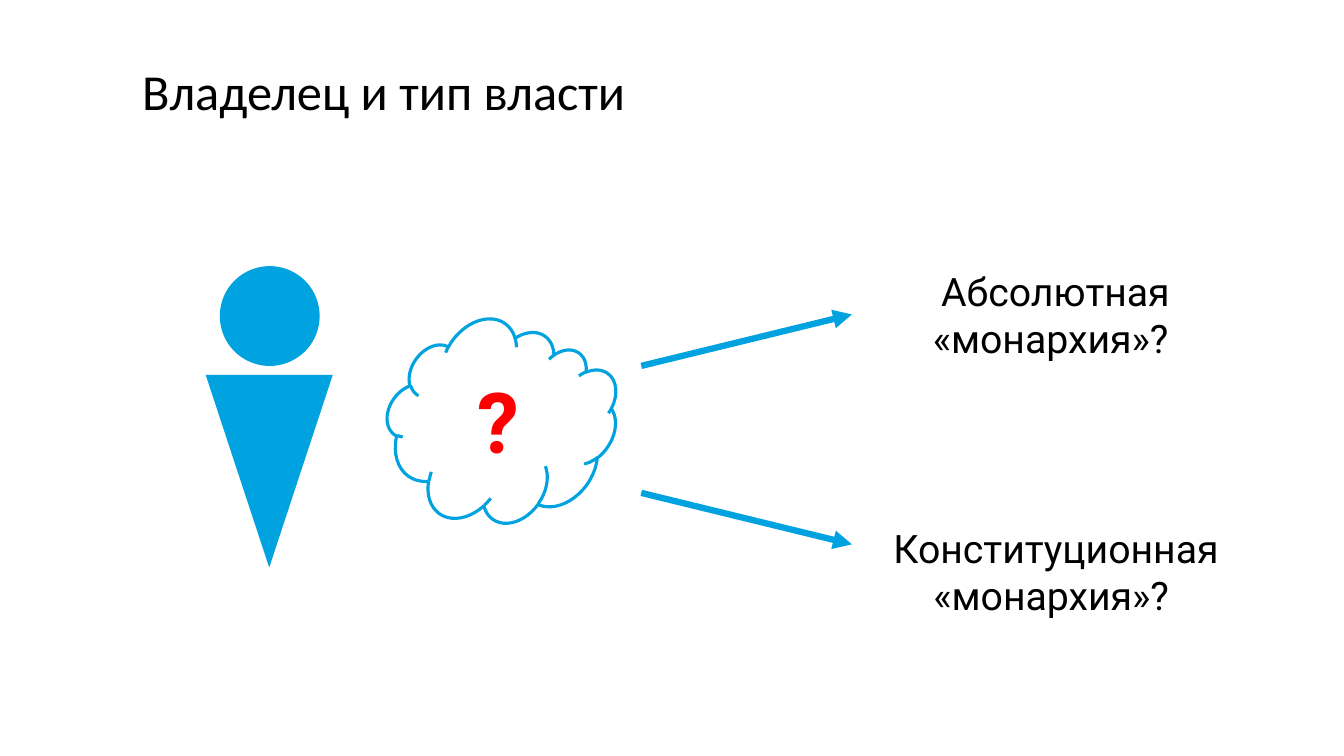
from pptx import Presentation
from pptx.dml.color import RGBColor
from pptx.enum.shapes import MSO_CONNECTOR, MSO_SHAPE
from pptx.enum.text import MSO_ANCHOR, MSO_AUTO_SIZE, PP_ALIGN
from pptx.oxml.ns import qn
from pptx.util import Inches, Pt
from lxml import etree

LEFT, CENTER = PP_ALIGN.LEFT, PP_ALIGN.CENTER
TOP = MSO_ANCHOR.TOP
NO_FIT = MSO_AUTO_SIZE.NONE
STRAIGHT = MSO_CONNECTOR.STRAIGHT
CLOUD = MSO_SHAPE.CLOUD
TRIANGLE, OVAL = MSO_SHAPE.ISOSCELES_TRIANGLE, MSO_SHAPE.OVAL
BLUE, BLACK, RED, WHITE = "00A3E0", "000000", "FF0000", "FFFFFF"


def rgb(value):
    return RGBColor.from_string(value)


def write(sp, text, size, font, color, align=CENTER, bold=False):
    tf = sp.text_frame
    tf.word_wrap = True
    tf.auto_size = NO_FIT
    tf.vertical_anchor = TOP
    p = tf.paragraphs[0]
    p.alignment = align
    r = p.add_run()
    r.text = text
    r.font.size = Pt(size)
    r.font.name = font
    r.font.bold = bold
    r.font.color.rgb = rgb(color)
    return p


prs = Presentation()
prs.slide_width, prs.slide_height = Inches(13.33), Inches(7.5)
s = prs.slides.add_slide(prs.slide_layouts[5])
s.background.fill.solid()
s.background.fill.fore_color.rgb = rgb(WHITE)

# Title
title = s.shapes.title
title.left, title.top = Inches(1.31), Inches(0.7)
title.width, title.height = Inches(10.92), Inches(0.57)
p = write(title, "Владелец и тип власти", 36, "Calibri", BLACK, LEFT)
p.line_spacing = Pt(32)

# Two types of power, each with its arrow
options = [
    (" Абсолютная «монархия»?", 8.72, 2.6, 3.4, 3.63, 3.12),
    (" Конституционная «монархия»?", 8.62, 5.15, 3.61, 4.89, 5.4),
]
for text, left, top, width, start, end in options:
    sp = s.shapes.add_textbox(Inches(left), Inches(top), Inches(width), Inches(1.04))
    write(sp, text, 28, "Roboto", BLACK)

    arrow = s.shapes.add_connector(
        STRAIGHT, Inches(6.36), Inches(start), Inches(8.45), Inches(end))
    arrow.line.color.rgb = rgb(BLUE)
    arrow.line.width = Pt(4.5)
    etree.SubElement(arrow.line._get_or_add_ln(), qn("a:tailEnd"), type="triangle")
    etree.SubElement(arrow._element.spPr, qn("a:effectLst"))

# Thought cloud with a question mark
sp = s.shapes.add_textbox(Inches(4.7), Inches(3.62), Inches(0.49), Inches(1.11))
write(sp, "?", 60, "Roboto", RED, bold=True)
sp.text_frame.word_wrap = False

cloud = s.shapes.add_shape(CLOUD, Inches(3.9), Inches(3.17), Inches(2.1), Inches(2.1))
cloud.rotation = 35.3
cloud.shadow.inherit = False
cloud.fill.background()
cloud.line.color.rgb = rgb(BLUE)
cloud.line.width = Pt(2.25)

# Owner figure: body and head
for kind, left, top, width, height, turn in [
    (TRIANGLE, 2.04, 3.72, 1.26, 1.91, 180),
    (OVAL, 2.18, 2.64, 0.99, 0.99, 0),
]:
    sp = s.shapes.add_shape(kind, Inches(left), Inches(top), Inches(width), Inches(height))
    sp.rotation = turn
    sp.shadow.inherit = False
    sp.fill.solid()
    sp.fill.fore_color.rgb = rgb(BLUE)
    sp.line.fill.background()

prs.save("out.pptx")
